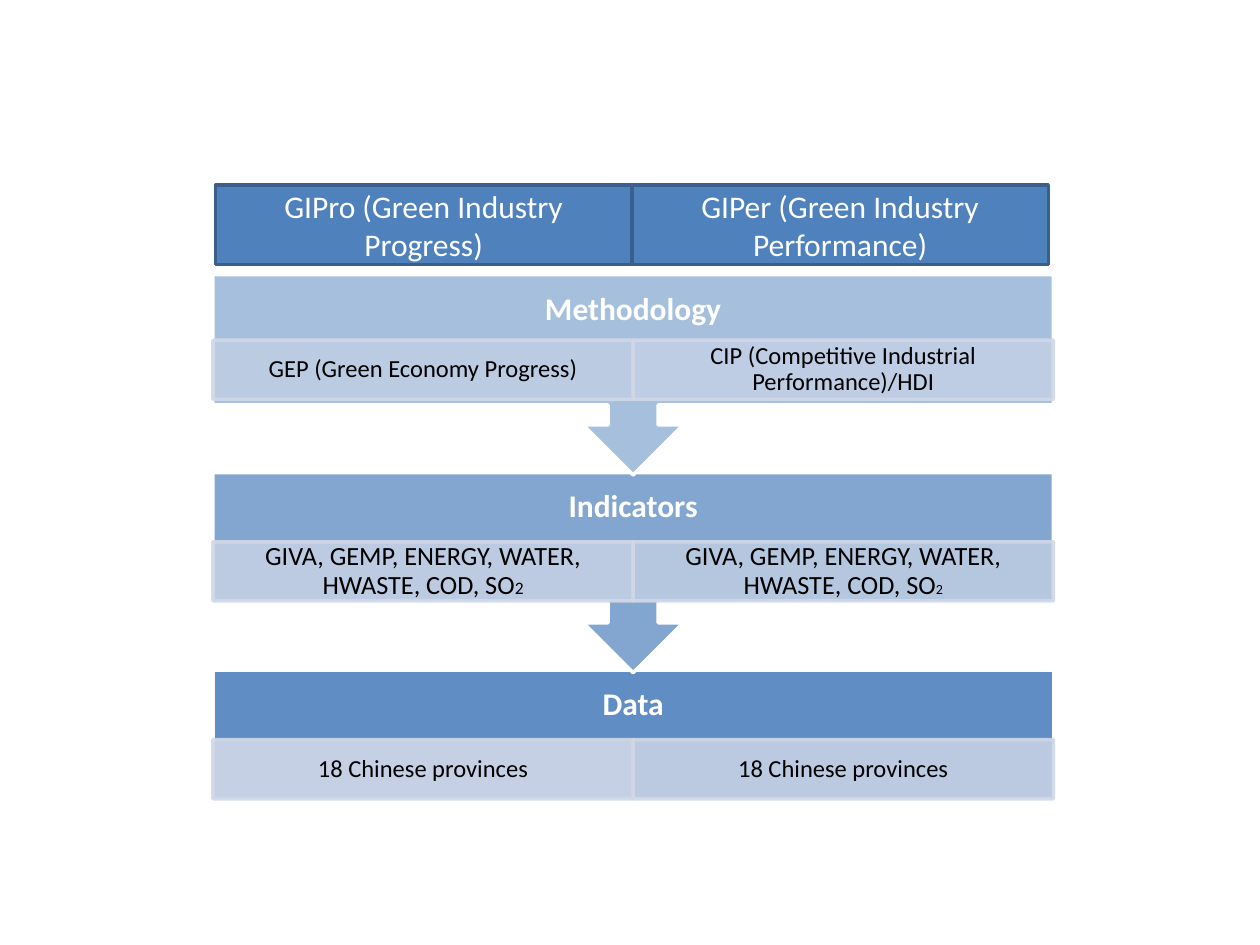
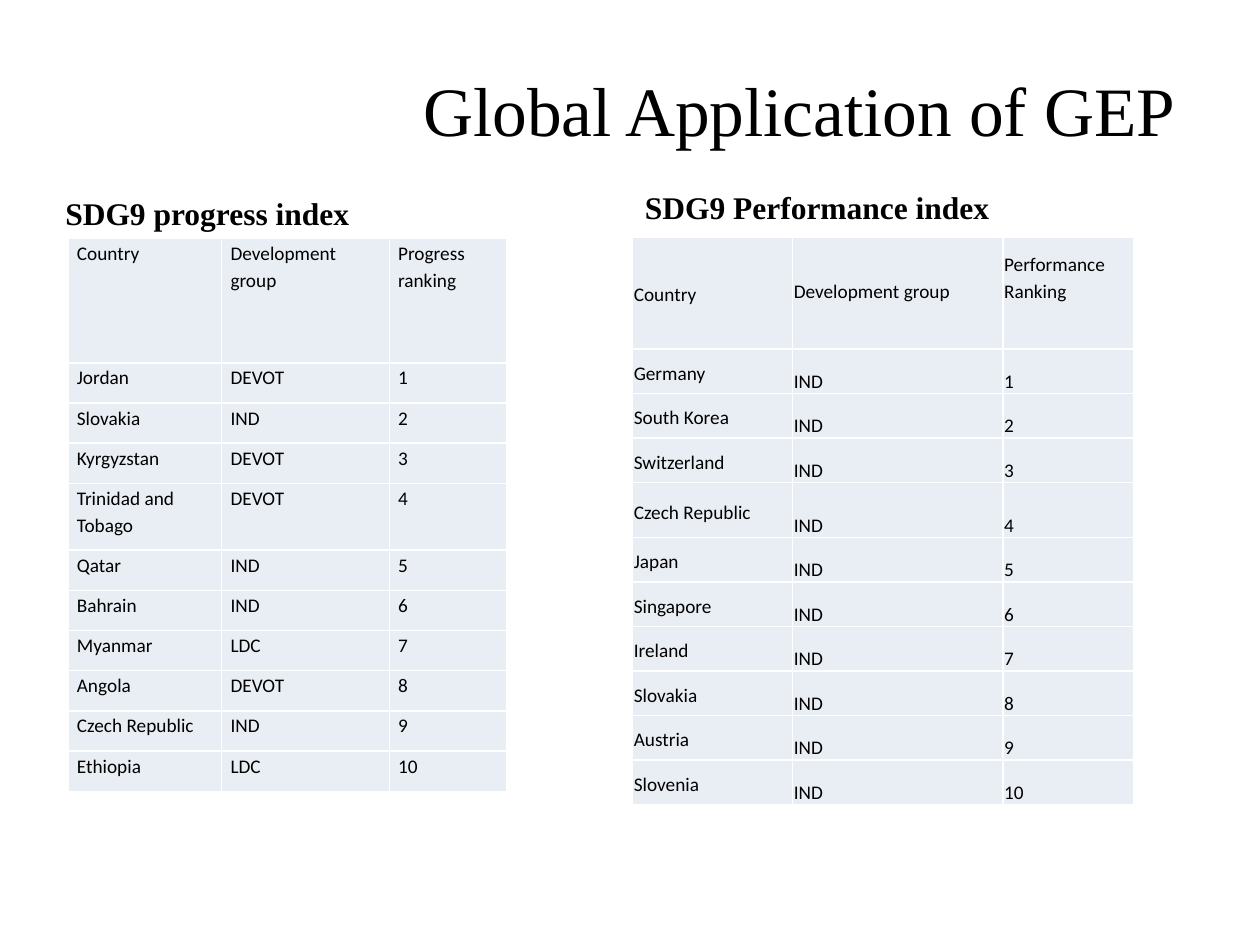
from collections import namedtuple

from pptx import Presentation
from pptx.dml.color import RGBColor
from pptx.enum.shapes import MSO_SHAPE
from pptx.enum.text import MSO_ANCHOR, PP_ALIGN
from pptx.oxml.ns import qn
from pptx.util import Emu, Inches, Pt
from lxml.etree import SubElement

# Shared grid: 100 columns by 75 rows
WIDTH, HEIGHT = Inches(10), Inches(7.5)
COLUMN, ROW = WIDTH / 100, HEIGHT / 75
Box = namedtuple("Box", "left top width height")

# Shared colours and fonts
BLUE, EDGE, PALE = "4F81BD", "3A5F8C", "D0D8E8"
CELL, WHITE, BLACK = "E9EDF4", "FFFFFF", "000000"
BODY_FONT, TITLE_FONT = "Calibri", "Times New Roman"


def color(value):
    return RGBColor.from_string(value)


def place(box):
    """Turn grid units into slide lengths."""
    return (Emu(round(box.left * COLUMN)), Emu(round(box.top * ROW)),
            Emu(round(box.width * COLUMN)), Emu(round(box.height * ROW)))


def set_alpha(format_xml, percent):
    for tint in format_xml.iter(qn("a:srgbClr")):
        SubElement(tint, qn("a:alpha"), val=str(percent * 1000))


def write(frame, text, size=14, font=BODY_FONT, ink=BLACK, bold=False,
          align=PP_ALIGN.LEFT, spacing=None, after=None):
    """Write a string, or a list of (string, size) spans, as one paragraph."""
    para = frame.paragraphs[0]
    para.alignment = align
    if spacing:
        para.line_spacing = spacing
    if after:
        para.space_after = Pt(after)
    for words, points in ([(text, size)] if isinstance(text, str) else text):
        span = para.add_run()
        span.text = words
        span.font.size = Pt(points)
        span.font.name = font
        span.font.bold = bold
        span.font.color.rgb = color(ink)


def set_frame(frame, inset, anchor):
    frame.word_wrap = True
    frame.vertical_anchor = anchor
    frame.margin_left = frame.margin_right = Inches(inset[0])
    frame.margin_top = frame.margin_bottom = Inches(inset[1])


def add_label(page, box, text, inset=(0.1, 0.05), anchor=MSO_ANCHOR.TOP, **style):
    frame = page.shapes.add_textbox(*place(box)).text_frame
    set_frame(frame, inset, anchor)
    write(frame, text, **style)


def add_panel(page, box, fill, line, kind=MSO_SHAPE.RECTANGLE,
              fill_alpha=100, line_alpha=100):
    panel = page.shapes.add_shape(kind, *place(box))
    panel.shadow.inherit = False
    panel.fill.solid()
    panel.fill.fore_color.rgb = color(fill)
    set_alpha(panel.fill._xPr.find(qn("a:solidFill")), fill_alpha)
    panel.line.color.rgb = color(line)
    panel.line.width = Pt(2)
    set_alpha(panel.line._ln, line_alpha)
    return panel


# Slide 1: stacked stages
def add_index_header(page, box, names):
    half = box.width / len(names)
    for index, name in enumerate(names):
        part = Box(box.left + index * half, box.top, half, box.height)
        frame = add_panel(page, part, BLUE, EDGE).text_frame
        set_frame(frame, (0.1, 0.05), MSO_ANCHOR.MIDDLE)
        write(frame, name, size=18, ink=WHITE, align=PP_ALIGN.CENTER)


def add_stage(page, box, title, cells, alpha, cell_alphas, size, cell_top, arrow):
    # Band, with an arrow to the next stage
    kind = MSO_SHAPE.UP_ARROW_CALLOUT if arrow else MSO_SHAPE.RECTANGLE
    band = add_panel(page, box, BLUE, WHITE, kind, fill_alpha=alpha)
    if arrow:
        band.rotation = 180
        for index, share in enumerate((0.25, 0.25, 0.25, 0.65)):
            band.adjustments[index] = share
    add_label(page, box._replace(height=5.6), title, inset=(0.14, 0.14),
              anchor=MSO_ANCHOR.MIDDLE, size=18, ink=WHITE, bold=True,
              align=PP_ALIGN.CENTER, spacing=0.9)
    # Two cells, one for each index
    half = box.width / len(cells)
    for index, (text, cell_alpha) in enumerate(zip(cells, cell_alphas)):
        part = Box(box.left + index * half, box.top + cell_top, half, 4.7)
        frame = add_panel(page, part, PALE, PALE, fill_alpha=cell_alpha,
                          line_alpha=90).text_frame
        set_frame(frame, (0.11, 0.02), MSO_ANCHOR.MIDDLE)
        write(frame, text, size=size, align=PP_ALIGN.CENTER, spacing=0.9)


def build_stages(page):
    pollutants = "GIVA, GEMP, ENERGY, WATER, HWASTE, COD, SO"
    stages = [
        ("Methodology", ["GEP (Green Economy Progress)",
                         "CIP (Competitive Industrial Performance)/HDI"],
         50, (50, 58), 14, 5.2),
        ("Indicators", [[(pollutants, 15), ("2", 10)], [(pollutants, 15), ("2", 8)]],
         70, (74, 66), 15, 5.5),
        ("Data", ["18 Chinese provinces"] * 2, 90, (90, 82), 14, 5.5),
    ]
    last = len(stages) - 1
    for index, stage in reversed(list(enumerate(stages))):
        height = 10.3 if index == last else 15.9
        box = Box(16.9, 21.8 + index * 15.7, 66.7, height)
        add_stage(page, box, *stage, arrow=index < last)
    add_index_header(page, Box(17.1, 14.7, 66.1, 6.3),
                     ["GIPro (Green Industry Progress)",
                      "GIPer (Green Industry Performance)"])


# Slide 2: ranking tables
def set_cell_borders(cell):
    properties = cell._tc.get_or_add_tcPr()
    for index, side in enumerate(("a:lnL", "a:lnR", "a:lnT", "a:lnB")):
        line = properties.makeelement(qn(side), {"w": str(Pt(1))})
        fill = SubElement(line, qn("a:solidFill"))
        SubElement(fill, qn("a:srgbClr"), val=WHITE)
        properties.insert(index, line)


def add_ranking(page, box, headings, countries, widths, heights, inset, anchors,
                header_gap=0):
    """Rank countries in order; heights are header, usual row and fourth row."""
    rows = [headings] + [(name, group, str(rank))
                         for rank, (name, group) in enumerate(countries, 1)]
    table = page.shapes.add_table(len(rows), len(headings), *place(box)).table
    table.first_row = table.horz_banding = False
    for column, width in zip(table.columns, widths):
        column.width = Emu(round(width * COLUMN))
    header, usual, fourth = heights
    for index, row in enumerate(table.rows):
        row.height = Emu(round({0: header, 4: fourth}.get(index, usual) * ROW))
        for cell, text, anchor in zip(row.cells, rows[index], anchors):
            cell.fill.solid()
            cell.fill.fore_color.rgb = color(CELL)
            set_cell_borders(cell)
            cell.vertical_anchor = anchor
            cell.margin_left = cell.margin_right = Inches(inset[0])
            cell.margin_top = Inches(inset[1])
            lifted = index == 0 and anchor == MSO_ANCHOR.BOTTOM
            cell.margin_bottom = Inches(header_gap if lifted else 0)
            write(cell.text_frame, text, size=11, spacing=1.15, after=10)


def build_rankings(page):
    # Title and table captions
    add_label(page, Box(30.2, 4.4, 66.5, 8.4), "Global Application of GEP",
              anchor=MSO_ANCHOR.MIDDLE, size=39.6, font=TITLE_FONT,
              align=PP_ALIGN.CENTER)
    for left, top, caption in ((4.2, 14.9, "SDG9 progress index"),
                               (50.2, 14.4, "SDG9 Performance index")):
        add_label(page, Box(left, top, 40.3, 4), caption, size=18,
                  font=TITLE_FONT, bold=True)
    # Progress table
    progress = [("Jordan", "DEVOT"), ("Slovakia", "IND"), ("Kyrgyzstan", "DEVOT"),
                ("Trinidad and Tobago", "DEVOT"), ("Qatar", "IND"),
                ("Bahrain", "IND"), ("Myanmar", "LDC"), ("Angola", "DEVOT"),
                ("Czech Republic", "IND"), ("Ethiopia", "LDC")]
    add_ranking(page, Box(5.4, 18.9, 34.8, 43.9),
                ("Country", "Development group", "Progress ranking"), progress,
                (12.2, 13.3, 9.3), (9.9, 3.19, 5.3), (0.07, 0),
                [MSO_ANCHOR.TOP] * 3)
    # Performance table
    performance = ["Germany", "South Korea", "Switzerland", "Czech Republic",
                   "Japan", "Singapore", "Ireland", "Slovakia", "Austria", "Slovenia"]
    add_ranking(page, Box(50.2, 18.8, 39.8, 45.1),
                ("Country", "Development group", "Performance Ranking"),
                [(name, "IND") for name in performance],
                (12.7, 16.7, 10.4), (8.9, 3.53, 4.4), (0.01, 0.01),
                [MSO_ANCHOR.MIDDLE, MSO_ANCHOR.BOTTOM, MSO_ANCHOR.BOTTOM],
                header_gap=0.36)


def main():
    deck = Presentation()
    deck.slide_width, deck.slide_height = WIDTH, HEIGHT
    for build in (build_stages, build_rankings):
        build(deck.slides.add_slide(deck.slide_layouts[6]))
    deck.save("out.pptx")


if __name__ == "__main__":
    main()
